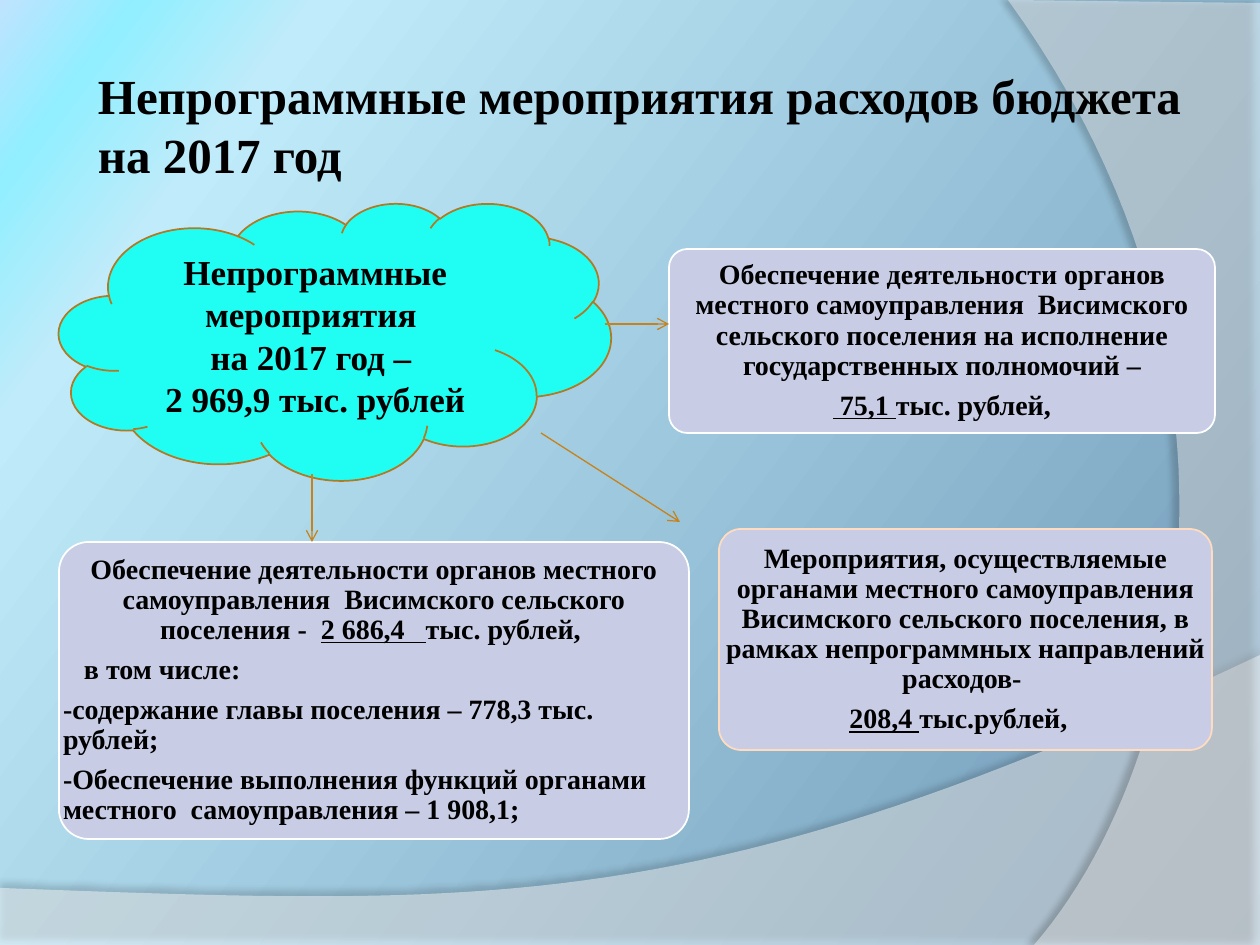
from lxml import etree
from pptx import Presentation, util as u
from pptx.dml.color import RGBColor
from pptx.enum import shapes, text
from pptx.oxml import parse_xml
from pptx.oxml.ns import nsdecls, qn

FONT = "Times New Roman"
BLACK = RGBColor(0x00, 0x00, 0x00)
WHITE = RGBColor(0xFF, 0xFF, 0xFF)
CYAN = RGBColor(0x20, 0xFE, 0xF3)
BROWN = RGBColor(0xB2, 0x78, 0x22)
ORANGE = RGBColor(0xC7, 0x82, 0x1B)
LAVENDER = RGBColor(0xC8, 0xCD, 0xE5)
PEACH = RGBColor(0xFF, 0xDB, 0xC0)
CENTER, LEFT = text.PP_ALIGN.CENTER, text.PP_ALIGN.LEFT

# Content: a paragraph is (alignment, left indent px, [(words, underlined)])
TITLE = "Непрограммные мероприятия расходов бюджета на 2017 год"
TOTAL = ["Непрограммные мероприятия ", "на 2017 год – ", "2 969,9 тыс. рублей"]
CARDS = [
    {"box": (59, 542, 630, 297), "line": WHITE, "paragraphs": [
        (CENTER, 0, [("Обеспечение деятельности органов местного самоуправления  "
                      "Висимского сельского поселения -  ", False),
                     ("2 686,4   ", True), ("тыс. рублей, ", False)]),
        (LEFT, 21, [("в том числе:", False)]),
        (LEFT, 0, [("-содержание главы поселения – 778,3 тыс. рублей;", False)]),
        (LEFT, 0, [("-Обеспечение выполнения функций органами местного  "
                    "самоуправления – 1 908,1;", False)])]},
    {"box": (669, 249, 546, 184), "line": WHITE, "paragraphs": [
        (CENTER, 0, [("Обеспечение деятельности органов местного самоуправления  "
                      "Висимского сельского поселения на исполнение "
                      "государственных полномочий –", False)]),
        (CENTER, 0, [(" 75,1 ", True), ("тыс. рублей,", False)])]},
    {"box": (719, 529, 493, 221), "line": PEACH, "paragraphs": [
        (CENTER, 0, [("Мероприятия, осуществляемые органами местного самоуправления "
                      "Висимского сельского поселения, в рамках непрограммных "
                      "направлений расходов- ", False)]),
        (CENTER, 0, [("208,4 ", True), ("тыс.рублей,  ", False)])]},
]
ARROWS = [(541, 433, 680, 522), (312, 474, 312, 542), (605, 324, 669, 324)]
GRADIENT = [(0, "6D95B4"), (84, "BFEBFA"), (93, "91EFFF"), (100, "BFE3FF")]
GRADIENT_ANGLE = 217
# Waves: straight corners, then the two controls and the end of one curve
WAVES = [
    {"corners": [(0, 888), (0, 946), (1260, 946), (1260, 655)],
     "curve": [(704, 919), (493, 906), (0, 888)],
     "alpha": 45, "shadow": (35, 3.5, 270)},
    {"corners": [(1260, 3), (1260, 945), (1034, 945)],
     "curve": [(1178, 780), (1283, 378), (1008, 0)],
     "alpha": 40, "shadow": (45, 4, 180)},
]
CURVE_STEPS = 48
CORNER = 0.1          # card corner radius as a share of its height
CARD_INSET = 4
EMU_PER_PX = 914400 / 126


def px(value):
    return u.Emu(round(value * EMU_PER_PX))


def style(target, values):
    for name, value in values.items():
        setattr(target, name, value)


def write(paragraph, words, size, underline=False):
    run = paragraph.add_run()
    run.text = words
    style(run.font, {"name": FONT, "size": u.Pt(size), "bold": True,
                     "underline": underline})
    run.font.color.rgb = BLACK


def set_frame(frame, inset=None):
    style(frame, {"word_wrap": True, "vertical_anchor": text.MSO_ANCHOR.MIDDLE})
    if inset is not None:
        style(frame, {"margin_" + side: px(inset)
                      for side in ("left", "right", "top", "bottom")})


def paragraph_at(frame, index):
    return frame.add_paragraph() if index else frame.paragraphs[0]


def paint(shape, fill, line):
    shape.shadow.inherit = False
    shape.fill.solid()
    shape.fill.fore_color.rgb = fill
    if line is None:
        shape.line.fill.background()
    else:
        shape.line.color.rgb = line
        shape.line.width = u.Pt(1)


def bezier(start, first, second, end):
    for step in range(1, CURVE_STEPS + 1):
        t = step / CURVE_STEPS
        weights = ((1 - t) ** 3, 3 * t * (1 - t) ** 2, 3 * t * t * (1 - t), t ** 3)
        yield tuple(sum(w * p[axis] for w, p in zip(weights, (start, first, second, end)))
                    for axis in (0, 1))


def add_wave(slide, wave):
    corners = wave["corners"]
    points = corners[1:] + list(bezier(corners[-1], *wave["curve"]))
    builder = slide.shapes.build_freeform(*map(px, corners[0]), scale=1.0)
    builder.add_line_segments([(px(x), px(y)) for x, y in points], close=True)
    shape = builder.convert_to_shape()
    paint(shape, WHITE, None)
    properties = shape._element.spPr
    color = properties.find(qn("a:solidFill"))[0]
    etree.SubElement(color, qn("a:alpha")).set("val", str(wave["alpha"] * 1000))
    alpha, distance, angle = wave["shadow"]
    properties.find(qn("a:effectLst")).append(parse_xml(
        f'<a:outerShdw {nsdecls("a")} blurRad="{u.Pt(4)}" dist="{u.Pt(distance)}" '
        f'dir="{angle * 60000}" rotWithShape="0"><a:srgbClr val="000000">'
        f'<a:alpha val="{alpha * 1000}"/></a:srgbClr></a:outerShdw>'))


def add_card(slide, card):
    shape = slide.shapes.add_shape(shapes.MSO_SHAPE.ROUNDED_RECTANGLE,
                                   *map(px, card["box"]))
    shape.adjustments[0] = CORNER
    paint(shape, LAVENDER, card["line"])
    # The preset already insets its text by 0.29 of the corner radius
    set_frame(shape.text_frame, CARD_INSET - 0.29 * CORNER * card["box"][3])
    for index, (alignment, indent, runs) in enumerate(card["paragraphs"]):
        paragraph = paragraph_at(shape.text_frame, index)
        style(paragraph, {"alignment": alignment, "line_spacing": 0.9,
                          "space_after": u.Pt(5.6)})
        if indent:
            paragraph._p.get_or_add_pPr().set("marL", str(px(indent)))
        for words, underline in runs:
            write(paragraph, words, 16, underline)


def add_arrow(slide, ends):
    arrow = slide.shapes.add_connector(shapes.MSO_CONNECTOR.STRAIGHT, *map(px, ends))
    arrow.line.color.rgb = ORANGE
    arrow.line.width = u.Pt(0.75)
    etree.SubElement(arrow.line._get_or_add_ln(), qn("a:tailEnd")).set("type", "arrow")
    etree.SubElement(arrow._element.spPr, qn("a:effectLst"))


def main():
    deck = Presentation()
    style(deck, {"slide_width": px(1260), "slide_height": px(945)})
    slide = deck.slides.add_slide(deck.slide_layouts[6])

    # Background gradient
    backdrop = slide.background.fill
    backdrop.gradient()
    backdrop.gradient_angle = 360 - GRADIENT_ANGLE
    stops = slide._element.find(".//" + qn("a:gsLst"))
    stops[:] = [parse_xml(f'<a:gs {nsdecls("a")} pos="{share * 1000}">'
                          f'<a:srgbClr val="{color}"/></a:gs>')
                for share, color in GRADIENT]
    for wave in WAVES:
        add_wave(slide, wave)

    # Title
    title = slide.shapes.add_textbox(*map(px, (92, 45, 1134, 158))).text_frame
    set_frame(title, 6)
    write(title.paragraphs[0], TITLE, 28)

    # Cloud with the total
    cloud = slide.shapes.add_shape(shapes.MSO_SHAPE.CLOUD, *map(px, (59, 203, 552, 277)))
    paint(cloud, CYAN, BROWN)
    set_frame(cloud.text_frame)
    for index, words in enumerate(TOTAL):
        paragraph = paragraph_at(cloud.text_frame, index)
        paragraph.alignment = CENTER
        write(paragraph, words, 20)

    # Expense cards and the arrows to them
    for card in CARDS:
        add_card(slide, card)
    for ends in ARROWS:
        add_arrow(slide, ends)

    deck.save("out.pptx")


if __name__ == "__main__":
    main()
